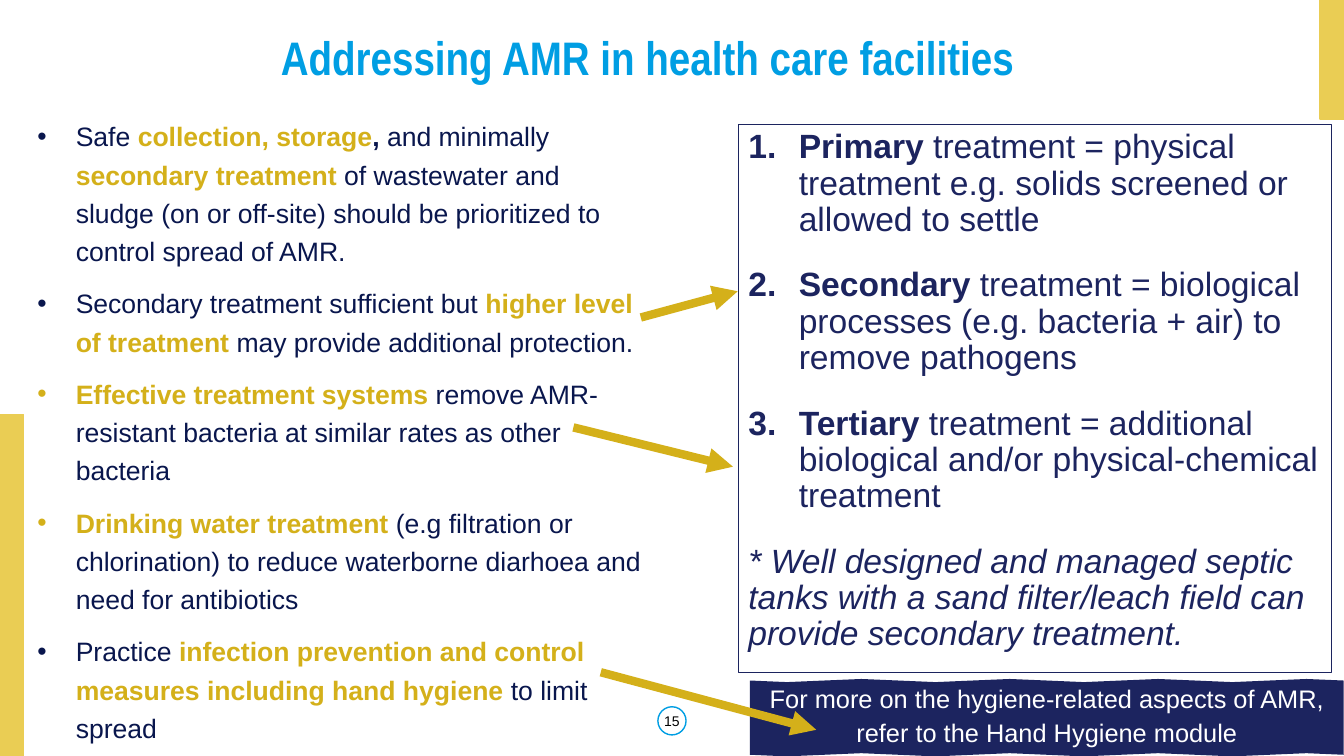
from dataclasses import dataclass
from math import pi, sin

from lxml.etree import SubElement
from pptx import Presentation
from pptx.dml.color import RGBColor
from pptx.enum.shapes import MSO_CONNECTOR, MSO_SHAPE
from pptx.enum.text import MSO_ANCHOR, MSO_AUTO_SIZE, PP_ALIGN
from pptx.oxml.ns import qn
from pptx.util import Cm, Pt


@dataclass(frozen=True)
class Theme:
    """Colours, fonts and type sizes of the slide."""
    blue: RGBColor = RGBColor.from_string("009EE3")
    navy: RGBColor = RGBColor.from_string("1C245F")
    ink: RGBColor = RGBColor.from_string("09164D")
    gold: RGBColor = RGBColor.from_string("D4B01A")
    bar: RGBColor = RGBColor.from_string("EACD54")
    black: RGBColor = RGBColor.from_string("000000")
    white: RGBColor = RGBColor.from_string("FFFFFF")
    heading_font: str = "Arial Narrow"
    body_font: str = "Arial"
    title_size: float = 33.6
    bullet_size: float = 19
    treatment_size: float = 24
    banner_size: float = 18.1
    number_size: float = 10


THEME = Theme()

STYLES = {
    "title": {"size": THEME.title_size, "color": THEME.blue, "bold": True, "name": THEME.heading_font},
    "plain": {"size": THEME.bullet_size, "color": THEME.ink, "bold": False},
    "strong": {"size": THEME.bullet_size, "color": THEME.ink, "bold": True},
    "gold": {"size": THEME.bullet_size, "color": THEME.gold, "bold": True},
    "stage": {"size": THEME.treatment_size, "color": THEME.navy, "bold": True},
    "detail": {"size": THEME.treatment_size, "color": THEME.navy, "bold": False},
    "note": {"size": THEME.treatment_size, "color": THEME.navy, "bold": False, "italic": True},
    "banner": {"size": THEME.banner_size, "color": THEME.white},
    "number": {"size": THEME.number_size, "color": THEME.black},
}

BULLETS = [
    [("Safe ", "plain"), ("collection, storage", "gold"), (", ", "strong"), ("and minimally ", "plain"),
     ("secondary treatment ", "gold"),
     ("of wastewater and sludge (on or off-site) should be prioritized to control spread of AMR.", "plain")],
    [("Secondary treatment sufficient but ", "plain"), ("higher level of treatment ", "gold"),
     ("may provide additional protection.", "plain")],
    [("Effective treatment systems ", "gold"),
     ("remove AMR-resistant bacteria at similar rates as other bacteria", "plain")],
    [("Drinking water treatment ", "gold"),
     ("(e.g filtration or chlorination) to reduce waterborne diarhoea and need for antibiotics", "plain")],
    [("Practice ", "plain"), ("infection prevention and control measures including hand hygiene ", "gold"),
     ("to limit spread", "plain")],
]

STAGES = [
    ("Primary", " treatment = physical treatment e.g. solids screened or allowed to settle"),
    ("Secondary", " treatment = biological processes (e.g. bacteria + air) to remove pathogens"),
    ("Tertiary", " treatment = additional biological and/or physical-chemical treatment"),
]
NOTE = ("* Well designed and managed septic tanks with a sand filter/leach field "
        "can provide secondary treatment.")

ARROWS = [
    ((15.14, 16.94), (20.57, 18.39)),
    ((16.15, 8), (18.59, 7.34)),
    ((14.45, 10.77), (18.47, 11.76)),
]


def set_values(target, **values):
    """Set each named attribute of the target."""
    for name, value in values.items():
        setattr(target, name, value)


def place(shape, box):
    """Move and size a shape to a box given in centimetres."""
    set_values(shape, **dict(zip(("left", "top", "width", "height"), map(Cm, box))))


def paint(shape, fill=None, line=None, weight=1):
    """Give a shape its fill and outline, without a shadow."""
    shape.shadow.inherit = False
    if fill is None:
        shape.fill.background()
    else:
        shape.fill.solid()
        shape.fill.fore_color.rgb = fill
    if line is None:
        shape.line.fill.background()
    else:
        shape.line.color.rgb = line
        shape.line.width = Pt(weight)


def add_runs(paragraph, runs):
    """Append styled runs to a paragraph."""
    for text, style in runs:
        run = paragraph.add_run()
        run.text = text
        values = {"name": THEME.body_font, **STYLES[style]}
        run.font.color.rgb = values.pop("color")
        set_values(run.font, **{**values, "size": Pt(values["size"])})


def set_list(paragraph, tag, indent=0, **attributes):
    """Give a paragraph its hanging indent and its bullet element."""
    properties = paragraph._p.get_or_add_pPr()
    properties.set("marL", str(Cm(indent)))
    properties.set("indent", str(-Cm(indent)))
    SubElement(properties, qn(tag), attributes)


def fill_text(shape, paragraphs, anchor=MSO_ANCHOR.TOP, margins=None, **spacing):
    """Write paragraphs into a shape and return them."""
    frame = shape.text_frame
    set_values(frame, word_wrap=True, auto_size=MSO_AUTO_SIZE.NONE, vertical_anchor=anchor)
    sides = margins or (0.25, 0.13, 0.25, 0.13)
    names = ("margin_left", "margin_top", "margin_right", "margin_bottom")
    set_values(frame, **dict(zip(names, map(Cm, sides))))
    for index, runs in enumerate(paragraphs):
        paragraph = frame.add_paragraph() if index else frame.paragraphs[0]
        add_runs(paragraph, runs)
        set_values(paragraph, **spacing)
        if index == 0:
            paragraph.space_before = Pt(0)
    return frame.paragraphs


def add_frame(slide):
    """Draw the two edge bars and the numbered circle."""
    for box in ((0, 10.44, 0.6, 8.61), (33.27, 0, 0.6, 3)):
        bar = slide.shapes.add_shape(MSO_SHAPE.RECTANGLE, *map(Cm, box))
        paint(bar, THEME.bar, THEME.bar)
    circle = slide.shapes.add_shape(MSO_SHAPE.OVAL, *map(Cm, (16.58, 17.81, 0.71, 0.71)))
    paint(circle, line=THEME.blue)
    fill_text(circle, [[("15", "number")]], MSO_ANCHOR.MIDDLE, (0, 0, 0, 0), alignment=PP_ALIGN.CENTER)
    circle.text_frame.word_wrap = False


def add_title(placeholder, box):
    """Write the slide title."""
    place(placeholder, box)
    fill_text(placeholder, [[("Addressing AMR in health care facilities", "title")]],
              alignment=PP_ALIGN.CENTER, line_spacing=0.9)


def add_bullets(placeholder, box):
    """Write the list of measures."""
    place(placeholder, box)
    for paragraph in fill_text(placeholder, BULLETS, line_spacing=1.2, space_before=Pt(10)):
        set_list(paragraph, "a:buChar", 0.97, char="•")


def add_treatments(placeholder, box):
    """Write the framed list of treatment stages and its note."""
    place(placeholder, box)
    paint(placeholder, line=THEME.navy, weight=0.75)
    stages = [[(stage, "stage"), (detail, "detail")] for stage, detail in STAGES]
    *numbered, note = fill_text(placeholder, stages + [[(NOTE, "note")]],
                                line_spacing=0.9, space_before=Pt(10), space_after=Pt(10.9))
    for paragraph in numbered:
        set_list(paragraph, "a:buAutoNum", 1.27, type="arabicPeriod")
    set_list(note, "a:buNone")


def add_banner(slide, box):
    """Draw the wavy banner with its cross-reference."""
    left, top, width, height = box
    steps = 16
    wave = [(left + width * step / steps, 0.04 * sin(pi * step / 2)) for step in range(steps + 1)]
    outline = [(x, top + rise) for x, rise in wave]
    outline += [(x, top + height + rise) for x, rise in reversed(wave)]
    points = [(Cm(x), Cm(y)) for x, y in outline]
    builder = slide.shapes.build_freeform(*points[0])
    builder.add_line_segments(points[1:])
    banner = builder.convert_to_shape()
    paint(banner, THEME.navy)
    text = "For more on the hygiene-related aspects of AMR, refer to the Hand Hygiene module"
    fill_text(banner, [[(text, "banner")]], MSO_ANCHOR.MIDDLE, (0.05, 0, 0.05, 0.2),
              alignment=PP_ALIGN.CENTER, line_spacing=1.1)


def add_arrow(slide, start, end):
    """Draw a thick gold arrow between two points."""
    arrow = slide.shapes.add_connector(MSO_CONNECTOR.STRAIGHT, *map(Cm, start + end))
    arrow.line.color.rgb = THEME.gold
    arrow.line.width = Pt(6)
    SubElement(arrow.line._get_or_add_ln(), qn("a:tailEnd"), type="triangle")
    SubElement(arrow._element.spPr, qn("a:effectLst"))


def main():
    """Build the slide and save it."""
    presentation = Presentation()
    set_values(presentation, slide_width=Cm(33.87), slide_height=Cm(19.05))
    slide = presentation.slides.add_slide(presentation.slide_layouts[3])
    title, bullets, treatments = slide.placeholders
    add_frame(slide)
    add_title(title, (1.72, 0.74, 29.21, 1.98))
    add_bullets(bullets, (0.69, 2.74, 15.77, 14.91))
    add_treatments(treatments, (18.61, 3.14, 14.95, 13.81))
    add_banner(slide, (18.9, 17.15, 14.96, 1.87))
    for start, end in ARROWS:
        add_arrow(slide, start, end)
    presentation.save("out.pptx")


if __name__ == "__main__":
    main()
